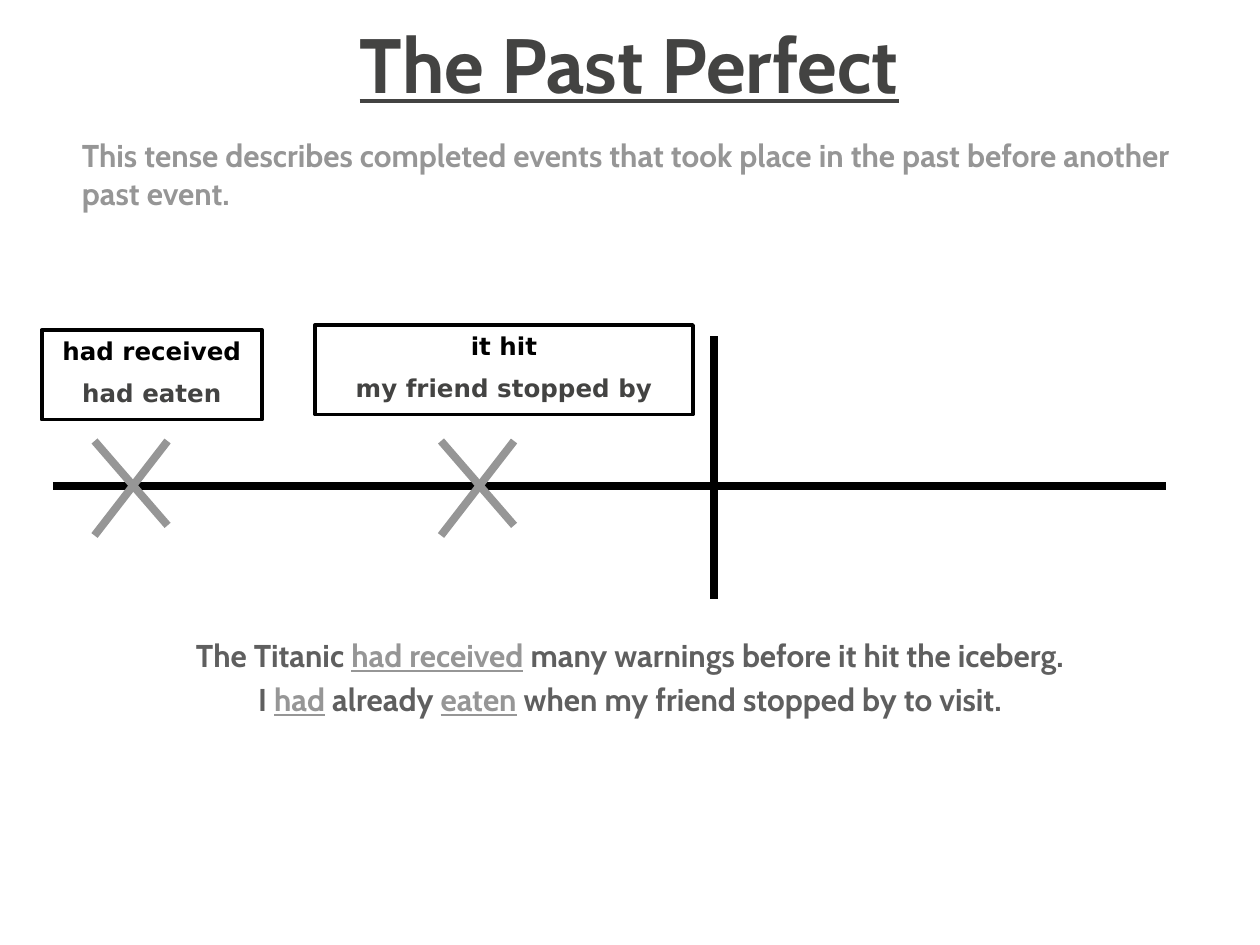
import dataclasses

import lxml.etree
import pptx
import pptx.dml.color
import pptx.enum.shapes
import pptx.enum.text
import pptx.oxml.ns
import pptx.util

Inches = pptx.util.Inches
Pt = pptx.util.Pt
ALIGN = pptx.enum.text.PP_ALIGN
ANCHOR = pptx.enum.text.MSO_ANCHOR


@dataclasses.dataclass(frozen=True)
class Theme:
    black: str = "000000"
    dark: str = "434342"
    body: str = "5F5F5F"
    accent: str = "969696"
    font: str = "Cabin"
    label_font: str = "DejaVu Sans"
    title_size: float = 44
    body_size: float = 18
    label_size: float = 14
    stroke: float = 4.5
    border: float = 2.25


def rgb(value):
    return pptx.dml.color.RGBColor.from_string(value)


class TenseSlide:
    """Draws the elements of a tense timeline on one slide."""

    def __init__(self, slide, theme):
        self.s = slide
        self.theme = theme

    def paragraph(self, tf, index, runs, size, font, align, gap=0):
        p = tf.paragraphs[0] if index == 0 else tf.add_paragraph()
        p.alignment = align
        if index:
            p.space_before = Pt(gap)
        p.font.size, p.font.name, p.font.bold = Pt(size), font, True
        for text, color, underline in runs:
            r = p.add_run()
            r.text = text
            r.font.color.rgb = rgb(color)
            if underline:
                r.font.underline = True

    def text(self, box, lines, size, align=ALIGN.CENTER, anchor=ANCHOR.TOP, inset=0.1):
        tf = self.s.shapes.add_textbox(*map(Inches, box)).text_frame
        tf.word_wrap = True
        tf.vertical_anchor = anchor
        tf.margin_left = Inches(inset)
        for i, runs in enumerate(lines):
            self.paragraph(tf, i, runs, size, self.theme.font, align, gap=size * 0.2)

    def lines(self, segments, color):
        group = self.s.shapes.add_group_shape()
        for ends in segments:
            sp = group.shapes.add_connector(
                pptx.enum.shapes.MSO_CONNECTOR.STRAIGHT, *map(Inches, ends))
            sp.line.color.rgb = rgb(color)
            sp.line.width = Pt(self.theme.stroke)
            lxml.etree.SubElement(sp._element.spPr, pptx.oxml.ns.qn("a:effectLst"))

    def cross(self, left, top=3.5, width=0.58):
        right = left + width
        self.lines([(left, top, right, top + 0.67), (right, top, left, top + 0.75)],
                   self.theme.accent)

    def label(self, box, first, second):
        t = self.theme
        sp = self.s.shapes.add_shape(
            pptx.enum.shapes.MSO_SHAPE.RECTANGLE, *map(Inches, box))
        sp.shadow.inherit = False
        sp.fill.background()
        sp.line.color.rgb = rgb(t.black)
        sp.line.width = Pt(t.border)
        tf = sp.text_frame
        tf.word_wrap = True
        tf.vertical_anchor = ANCHOR.TOP
        for i, (text, color) in enumerate([(first, t.black), (second, t.dark)]):
            self.paragraph(tf, i, [(text, color, False)], t.label_size, t.label_font,
                           ALIGN.CENTER, gap=t.label_size * 0.5)


def main():
    prs = pptx.Presentation()
    prs.slide_width, prs.slide_height = Inches(10), Inches(7.5)
    t = Theme()
    s = TenseSlide(prs.slides.add_slide(prs.slide_layouts[6]), t)

    s.text((0.08, 0.08, 9.83, 0.83), [[("The Past Perfect", t.dark, True)]],
           t.title_size, anchor=ANCHOR.BOTTOM)
    s.text((0.17, 1.03, 9.5, 1.72),
           [[("This tense describes completed events that took place in the past "
              "before another past event.", t.accent, False)]],
           t.body_size, align=ALIGN.LEFT, inset=0.48)
    s.text((0, 5, 10, 1), [
        [("The Titanic ", t.body, False), ("had received", t.accent, True),
         (" many warnings before it hit the iceberg.", t.body, False)],
        [("I ", t.body, False), ("had", t.accent, True), (" already ", t.body, False),
         ("eaten", t.accent, True), (" when my friend stopped by to visit.", t.body, False)],
    ], t.body_size)

    s.lines([(0.42, 3.86, 9.25, 3.86), (5.67, 2.67, 5.67, 4.75)], t.black)
    for left in (3.5, 0.75):
        s.cross(left)
    s.label((0.33, 2.62, 1.75, 0.71), "had received", "had eaten")
    s.label((2.5, 2.58, 3, 0.71), "it hit", "my friend stopped by")

    prs.save("out.pptx")


if __name__ == "__main__":
    main()
